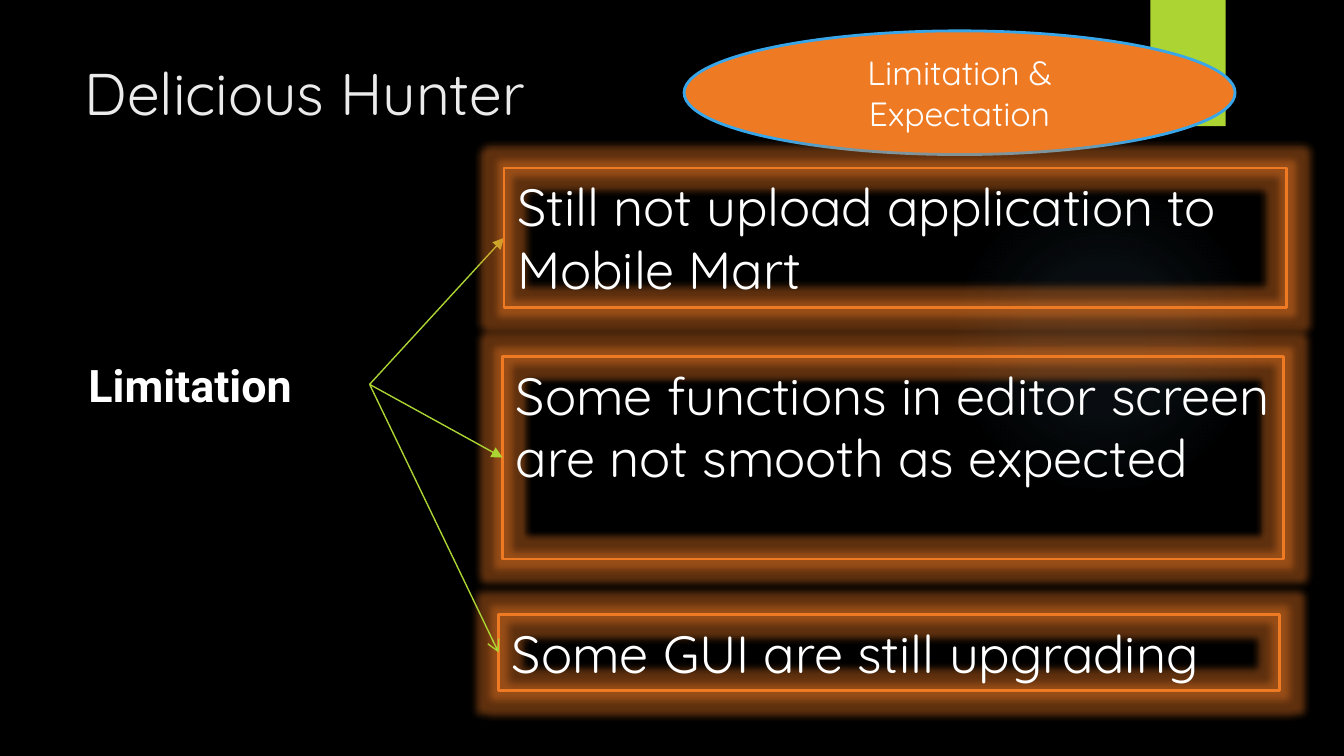
from lxml.etree import SubElement
from pptx import Presentation
from pptx.dml.color import RGBColor
from pptx.enum.shapes import MSO_CONNECTOR, MSO_SHAPE
from pptx.enum.text import MSO_ANCHOR, PP_ALIGN
from pptx.oxml import parse_xml
from pptx.oxml.ns import nsdecls, qn
from pptx.util import Inches, Pt

COLORS = {
    "black": "000000",
    "white": "FFFFFF",
    "title": "EBEBEB",
    "green": "ACD433",
    "orange": "EF7A24",
    "blue": "38A6E9",
    "halo": "7AC4F0",
}


def add_box(kind, place, fill=None, line=None):
    box = page.shapes.add_shape(kind, *[Inches(value) for value in place])
    box.shadow.inherit = False
    if fill:
        box.fill.solid()
        box.fill.fore_color.rgb = RGBColor.from_string(COLORS[fill])
    else:
        box.fill.background()
    if line:
        box.line.color.rgb = RGBColor.from_string(COLORS[line])
        box.line.width = Pt(1.5)
    else:
        box.line.fill.background()
    return box


def write(box, text, size, align=PP_ALIGN.LEFT, anchor=MSO_ANCHOR.TOP,
          color="white", name="Quicksand", bold=False):
    frame = box.text_frame
    frame.word_wrap = True
    frame.vertical_anchor = anchor
    para = frame.paragraphs[0]
    para.alignment = align
    span = para.add_run()
    span.text = text
    for key, value in {"name": name, "size": Pt(size), "bold": bold}.items():
        setattr(span.font, key, value)
    span.font.color.rgb = RGBColor.from_string(COLORS[color])


deck = Presentation()
deck.slide_width = Inches(10)
deck.slide_height = Inches(10 * 9 / 16)
page = deck.slides.add_slide(deck.slide_layouts[5])
page.background.fill.solid()
page.background.fill.fore_color.rgb = RGBColor.from_string(COLORS["black"])

halo = add_box(MSO_SHAPE.OVAL, (7.06, 1.38, 2.31, 2.31))
stops = "".join(
    f'<a:gs pos="{position * 1000}"><a:srgbClr val="{COLORS["halo"]}">'
    f'<a:alpha val="{alpha * 1000}"/></a:srgbClr></a:gs>'
    for position, alpha in [(0, 7), (36, 6), (69, 0)]
)
gradient = parse_xml(
    f'<a:gradFill {nsdecls("a")} rotWithShape="1"><a:gsLst>{stops}</a:gsLst>'
    '<a:path path="circle"><a:fillToRect l="50000" t="50000" r="50000" b="50000"/>'
    '</a:path></a:gradFill>'
)
properties = halo._element.spPr
properties.replace(properties.find(qn("a:noFill")), gradient)

add_box(MSO_SHAPE.RECTANGLE, (8.56, 0, 0.56, 0.94), "green")

title = page.shapes.title
title_place = {"left": 0.53, "top": 0.37, "width": 7.71, "height": 1.15}
for key, value in title_place.items():
    setattr(title, key, Inches(value))
write(title, "Delicious Hunter", 31.5, color="title")
page.shapes._spTree.append(title._element)

topic = add_box(MSO_SHAPE.OVAL, (5.09, 0.23, 4.1, 0.92), "orange", "blue")
write(topic, "Limitation & Expectation", 18, PP_ALIGN.CENTER, MSO_ANCHOR.MIDDLE)

heading = add_box(MSO_SHAPE.RECTANGLE, (0.08, 2.61, 2.67, 0.5), "black", "black")
write(heading, "Limitation", 24, PP_ALIGN.CENTER, name="Roboto", bold=True)

limitations = [
    ("Still not upload application to Mobile Mart", (3.75, 1.25, 5.82, 1.04), "triangle", True),
    ("Some functions in editor screen are not smooth as expected",
     (3.74, 2.65, 5.81, 1.51), "triangle", False),
    ("Some GUI are still upgrading", (3.71, 4.57, 5.81, 0.57), "arrow", False),
]
for text, place, head, arrow_behind in limitations:
    box = add_box(MSO_SHAPE.RECTANGLE, place, line="orange")
    write(box, text, 28)
    effects = box._element.spPr.find(qn("a:effectLst"))
    glow = SubElement(effects, qn("a:glow"), rad=str(Pt(8)))
    tint = SubElement(glow, qn("a:srgbClr"), val=COLORS["orange"])
    SubElement(tint, qn("a:alpha"), val="40000")

    arrow = page.shapes.add_connector(MSO_CONNECTOR.STRAIGHT, 0, 0, 0, 0)
    arrow.begin_connect(heading, 3)
    arrow.end_connect(box, 1)
    arrow.line.color.rgb = RGBColor.from_string(COLORS["green"])
    arrow.line.width = Pt(0.75)
    SubElement(arrow.line._get_or_add_ln(), qn("a:tailEnd"), type=head)
    SubElement(arrow._element.spPr, qn("a:effectLst"))
    if arrow_behind:
        box._element.addprevious(arrow._element)

deck.save("out.pptx")
